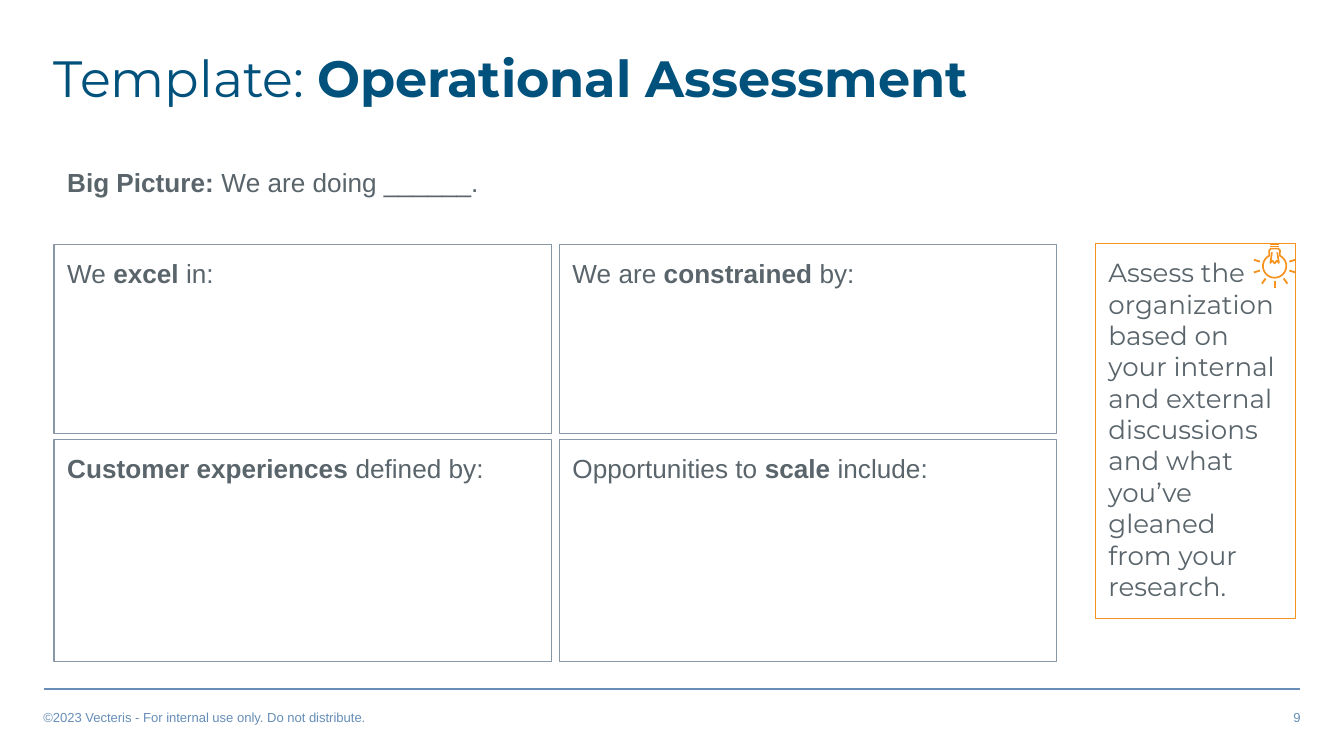
from math import cos, radians, sin

from lxml import etree
from pptx import Presentation
from pptx.dml.color import RGBColor
from pptx.enum.shapes import MSO_CONNECTOR, MSO_SHAPE
from pptx.enum.text import MSO_ANCHOR as Anchor, PP_ALIGN as Align
from pptx.oxml.ns import qn
from pptx.util import Cm, Pt

NAVY = RGBColor(0x00, 0x51, 0x7C)
BLUE = RGBColor(0x66, 0x8E, 0xB9)
SLATE = RGBColor(0x59, 0x64, 0x6B)
GRAY = RGBColor(0x88, 0x97, 0xA5)
ORANGE = RGBColor(0xF6, 0x92, 0x1E)
WHITE = RGBColor(0xFF, 0xFF, 0xFF)

BODY_FONT = "Arial"
DISPLAY_FONT = "Montserrat"

# Assessment grid, in cm
GRID_LEFT, GRID_TOP = 1.02, 4.62
BOX_WIDTH, ROW_HEIGHTS = 9.4, (3.58, 4.19)
COLUMN_GAP, ROW_GAP = 0.15, 0.11

# Each text is a list of (words, bold) runs
QUADRANTS = [
    [
        [("We ", False), ("excel", True), (" in:", False)],
        [("We are ", False), ("constrained", True), (" by:", False)],
    ],
    [
        [("Customer experiences ", True), ("defined by:", False)],
        [("Opportunities to ", False), ("scale", True), (" include:", False)],
    ],
]
ADVICE = ("Assess the organization based on your internal and external "
          "discussions and what you’ve gleaned from your research.")


def write_text(shape, runs, size=14, font=BODY_FONT, color=SLATE,
               margins=(0.25, 0.25), anchor=Anchor.TOP, align=Align.LEFT):
    text_frame = shape.text_frame
    text_frame.word_wrap = True
    text_frame.vertical_anchor = anchor
    text_frame.margin_left = text_frame.margin_right = Cm(margins[0])
    text_frame.margin_top = text_frame.margin_bottom = Cm(margins[1])
    paragraph = text_frame.paragraphs[0]
    paragraph.alignment = align
    for words, bold in runs:
        run = paragraph.add_run()
        run.text = words
        run.font.name = font
        run.font.size = Pt(size)
        run.font.bold = bold
        run.font.color.rgb = color
    return paragraph


def add_text(slide, left, top, width, height, runs, **style):
    shape = slide.shapes.add_textbox(Cm(left), Cm(top), Cm(width), Cm(height))
    return write_text(shape, runs, **style)


def add_box(slide, left, top, width, height, line_color, runs, **style):
    shape = slide.shapes.add_shape(
        MSO_SHAPE.RECTANGLE, Cm(left), Cm(top), Cm(width), Cm(height))
    shape.shadow.inherit = False
    shape.fill.solid()
    shape.fill.fore_color.rgb = WHITE
    shape.line.color.rgb = line_color
    shape.line.width = Pt(0.75)
    write_text(shape, runs, **style)


def add_line(slide, x1, y1, x2, y2, color, width=1):
    line = slide.shapes.add_connector(
        MSO_CONNECTOR.STRAIGHT, Cm(x1), Cm(y1), Cm(x2), Cm(y2))
    line.line.color.rgb = color
    line.line.width = Pt(width)
    etree.SubElement(line._element.spPr, qn("a:effectLst"))


def add_outline(slide, points, close):
    start, *rest = [(Cm(x), Cm(y)) for x, y in points]
    builder = slide.shapes.build_freeform(*start)
    builder.add_line_segments(rest, close=close)
    shape = builder.convert_to_shape()
    shape.shadow.inherit = False
    shape.fill.background()
    shape.line.color.rgb = ORANGE
    shape.line.width = Pt(0.9)


def add_light_bulb(slide, x, y):
    """Draw an upside-down bulb whose glass is centred at x, y."""
    def around(radius, degrees):
        angle = radians(degrees)
        return x + radius * cos(angle), y + radius * sin(angle)

    # Glass: a round arc closed by a narrow neck
    glass = [around(0.22, degrees) for degrees in range(-63, 244, 9)]
    neck = [(x - 0.1, y - 0.3), (x - 0.07, y - 0.33),
            (x + 0.07, y - 0.33), (x + 0.1, y - 0.3)]
    add_outline(slide, glass + neck, close=True)

    # Filament
    zigzag = [(-0.05, -0.26), (-0.08, -0.06), (-0.04, -0.1), (0, -0.05),
              (0.04, -0.1), (0.08, -0.06), (0.05, -0.26)]
    add_outline(slide, [(x + dx, y + dy) for dx, dy in zigzag], close=False)

    # Screw base and rays
    for rise in (0.37, 0.42):
        add_line(slide, x - 0.09, y - rise, x + 0.09, y - rise, ORANGE)
    for degrees in (-17, 17, 54, 90, 126, 163, 197):
        add_line(slide, *around(0.29, degrees), *around(0.41, degrees), ORANGE)


def add_footer(slide):
    add_line(slide, 0.84, 13.03, 24.56, 13.03, BLUE)
    style = dict(size=7, color=BLUE, margins=(0.18, 0.1))
    notice = "©2023 Vecteris - For internal use only. Do not distribute."
    add_text(slide, 0.64, 13.31, 10.16, 0.48, [(notice, False)], **style)
    add_text(slide, 14.6, 13.31, 10.16, 0.48, [("9", False)],
             align=Align.RIGHT, **style)


def add_grid(slide):
    top = GRID_TOP
    for row, height in zip(QUADRANTS, ROW_HEIGHTS):
        for column, runs in enumerate(row):
            left = GRID_LEFT + column * (BOX_WIDTH + COLUMN_GAP)
            add_box(slide, left, top, BOX_WIDTH, height, GRAY, runs)
        top += height + ROW_GAP


def main():
    presentation = Presentation()
    presentation.slide_width = Cm(25.4)
    presentation.slide_height = Cm(14.29)
    slide = presentation.slides.add_slide(presentation.slide_layouts[6])

    # Title and opening statement
    title = add_text(
        slide, 0.84, 0.81, 18.75, 1.45,
        [("Template: ", False), ("Operational Assessment", True)],
        size=27.3, font=DISPLAY_FONT, color=NAVY,
        margins=(0.18, 0.1), anchor=Anchor.MIDDLE)
    title.line_spacing = 0.9
    add_text(slide, 1.02, 2.9, 23.52, 1.12,
             [("Big Picture:", True), (" We are doing ______.", False)])

    # Four quadrants
    add_grid(slide)

    # Advice panel with its bulb
    add_box(slide, 20.7, 4.6, 3.78, 7.09, ORANGE, [(ADVICE, False)],
            font=DISPLAY_FONT)
    add_light_bulb(slide, 24.09, 5.03)

    add_footer(slide)
    presentation.save("out.pptx")


if __name__ == "__main__":
    main()
